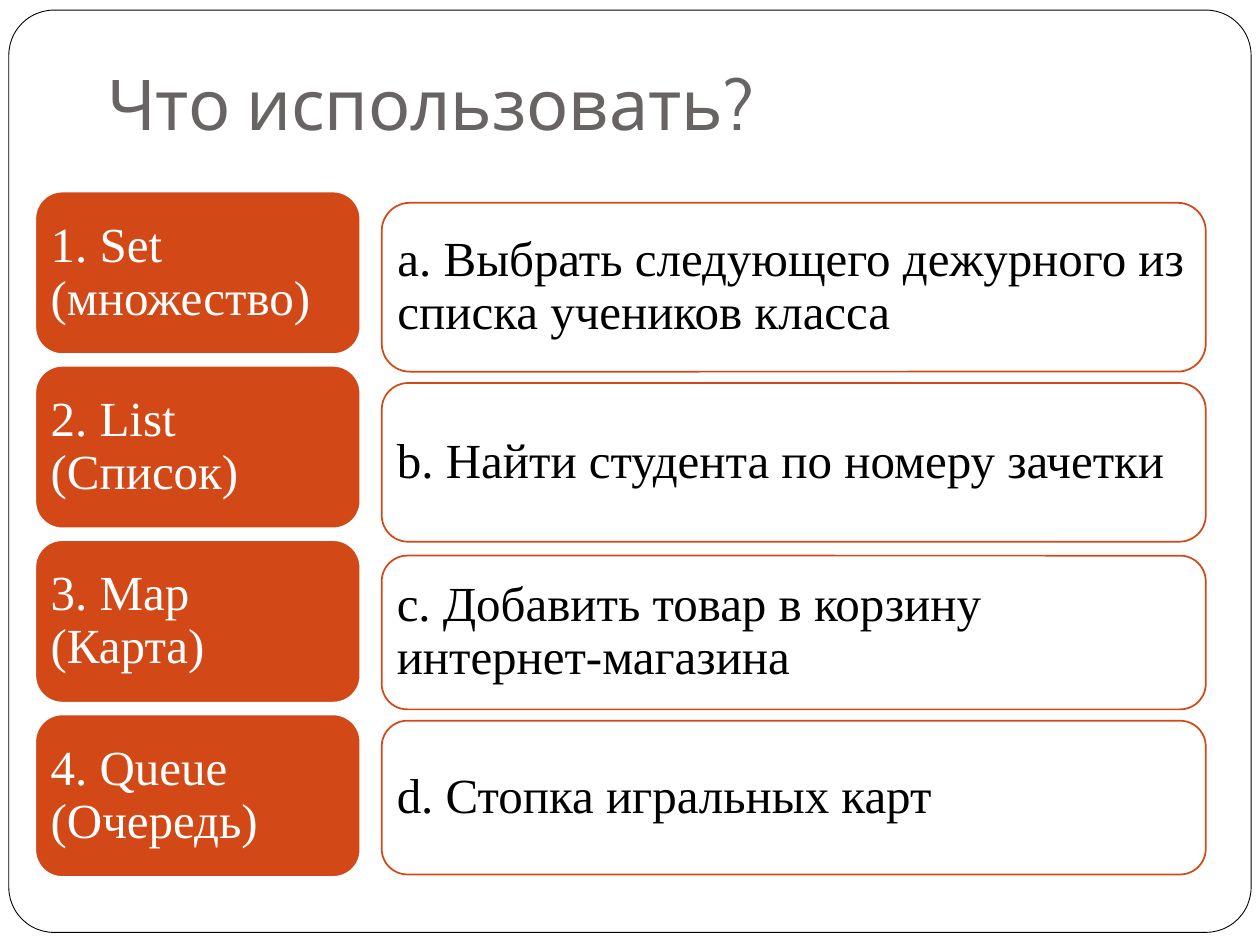
from pptx import Presentation
from pptx.dml.color import RGBColor
from pptx.enum.shapes import MSO_SHAPE
from pptx.enum.text import MSO_ANCHOR, PP_ALIGN
from pptx.util import Inches, Pt

WHITE = RGBColor(0xFF, 0xFF, 0xFF)
BLACK = RGBColor(0x00, 0x00, 0x00)
ORANGE = RGBColor(0xD3, 0x48, 0x17)
GRAY = RGBColor(0x69, 0x64, 0x64)

# Collections: equal cards spread over the column
COLLECTIONS = ["1. Set (множество)", "2. List (Список)",
               "3. Map (Карта)", "4. Queue (Очередь)"]
LEFT_X, LEFT_W = 0.28, 2.58
LEFT_TOP, LEFT_BOTTOM, LEFT_H = 1.52, 6.96, 1.29

# Tasks: top, height and text of each card
TASKS = [
    (1.61, 1.34, "a. Выбрать следующего дежурного из списка учеников класса"),
    (3.04, 1.26, "b. Найти студента по номеру зачетки"),
    (4.41, 1.22, "c. Добавить товар в корзину интернет-магазина"),
    (5.72, 1.22, "d. Стопка игральных карт"),
]
RIGHT_X, RIGHT_W = 3.03, 6.54


def add_round_box(s, x, y, w, h, fill, line, line_width):
    sp = s.shapes.add_shape(MSO_SHAPE.ROUNDED_RECTANGLE,
                            Inches(x), Inches(y), Inches(w), Inches(h))
    sp.shadow.inherit = False
    sp.fill.solid()
    sp.fill.fore_color.rgb = fill
    sp.line.color.rgb = line
    sp.line.width = Pt(line_width)
    return sp


def format_run(p, font, size, color):
    f = p.runs[0].font
    f.name, f.size, f.color.rgb = font, Pt(size), color


def add_card(s, x, y, w, h, text, fill, line, color):
    tf = add_round_box(s, x, y, w, h, fill, line, 1).text_frame
    tf.text = text
    tf.word_wrap = True
    tf.vertical_anchor = MSO_ANCHOR.MIDDLE
    # The rounded corners add their own inset to this margin
    tf.margin_left = tf.margin_right = Inches(0.06)
    tf.margin_top = tf.margin_bottom = Inches(0.06)
    p = tf.paragraphs[0]
    p.alignment = PP_ALIGN.LEFT
    p.line_spacing = 0.9
    format_run(p, "Times New Roman", 28, color)


def set_title(s, text):
    title = s.shapes.title
    title.left, title.top = Inches(0.75), Inches(0)
    title.width, title.height = Inches(8.5), Inches(1.25)
    tf = title.text_frame
    tf.text = text
    tf.vertical_anchor = MSO_ANCHOR.BOTTOM
    tf.margin_bottom = Inches(0.1)
    p = tf.paragraphs[0]
    p.alignment = PP_ALIGN.LEFT
    format_run(p, "Cabin", 40, GRAY)


def add_frame(s):
    frame = add_round_box(s, 0.07, 0.08, 9.86, 7.32, WHITE, BLACK, 0.5)
    frame.adjustments[0] = 0.049
    # Send the frame behind the title
    s.shapes.title.element.addprevious(frame.element)


def main():
    prs = Presentation()
    prs.slide_width, prs.slide_height = Inches(10), Inches(7.5)
    s = prs.slides.add_slide(prs.slide_layouts[5])

    add_frame(s)
    set_title(s, "Что использовать?")

    # Left column
    step = (LEFT_BOTTOM - LEFT_TOP - LEFT_H) / (len(COLLECTIONS) - 1)
    for i, text in enumerate(COLLECTIONS):
        add_card(s, LEFT_X, LEFT_TOP + i * step, LEFT_W, LEFT_H,
                 text, ORANGE, WHITE, WHITE)

    # Right column
    for top, height, text in TASKS:
        add_card(s, RIGHT_X, top, RIGHT_W, height, text, WHITE, ORANGE, BLACK)

    prs.save("out.pptx")


if __name__ == "__main__":
    main()
